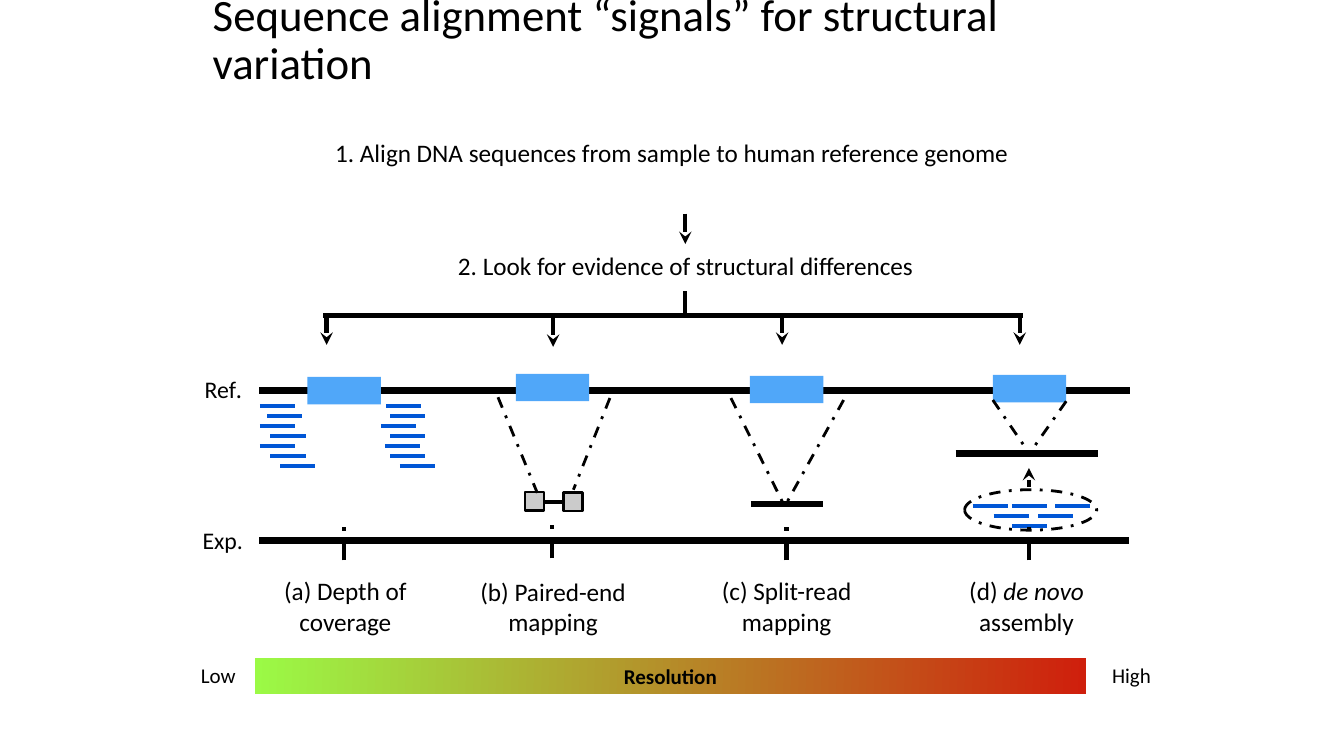
from dataclasses import dataclass

from lxml import etree
from pptx import Presentation
from pptx import util as u
from pptx.dml import color
from pptx.enum import dml, shapes, text
from pptx.oxml import ns

BLACK, READ_BLUE, BLOCK_BLUE, GREY = "000000", "0056D6", "50A7F9", "CBCBCB"
LOW_GREEN, HIGH_RED = "9BFA46", "CF1F0C"
READ_LENGTH, READ_STEP = 0.89, 0.25
INSET = 0.1
MIDDLE, BOTTOM = text.MSO_ANCHOR.MIDDLE, text.MSO_ANCHOR.BOTTOM
RECTANGLE, OVAL = shapes.MSO_SHAPE.RECTANGLE, shapes.MSO_SHAPE.OVAL


@dataclass
class Stroke:
    x1: float
    y1: float
    x2: float
    y2: float
    width: float = 3
    ink: str = BLACK
    dashed: bool = False
    arrow: bool = False


@dataclass
class Span:
    words: str
    italic: bool = False
    face: str = ""


@dataclass
class Label:
    left: float
    top: float
    width: float
    height: float
    size: float
    lines: list[list[Span]]
    anchor: text.MSO_ANCHOR = BOTTOM


@dataclass
class Method:
    centre: float
    block_top: float
    branch_x: float
    branch_end: float
    tick_bottom: float
    caption: Label


def rgb(code: str) -> color.RGBColor:
    return color.RGBColor.from_string(code)


def draw_stroke(page, stroke: Stroke) -> None:
    line = page.shapes.add_connector(
        shapes.MSO_CONNECTOR.STRAIGHT,
        u.Cm(stroke.x1), u.Cm(stroke.y1), u.Cm(stroke.x2), u.Cm(stroke.y2))
    line.line.width = u.Pt(stroke.width)
    line.line.color.rgb = rgb(stroke.ink)
    if stroke.dashed:
        line.line.dash_style = dml.MSO_LINE.DASH_DOT
    if stroke.arrow:
        tip = etree.SubElement(line.line._get_or_add_ln(), ns.qn("a:tailEnd"))
        tip.set("type", "stealth")
    etree.SubElement(line._element.spPr, ns.qn("a:effectLst"))


def draw_shape(page, kind, left: float, top: float, width: float, height: float,
               fill: str = "", outlined: bool = False):
    shape = page.shapes.add_shape(kind, u.Cm(left), u.Cm(top), u.Cm(width), u.Cm(height))
    shape.shadow.inherit = False
    if fill:
        shape.fill.solid()
        shape.fill.fore_color.rgb = rgb(fill)
    else:
        shape.fill.background()
    if outlined:
        shape.line.color.rgb = rgb(BLACK)
        shape.line.width = u.Pt(2)
    else:
        shape.line.fill.background()
    return shape


def set_frame(frame, anchor, inset: float) -> None:
    frame.word_wrap = True
    frame.auto_size = text.MSO_AUTO_SIZE.NONE
    frame.vertical_anchor = anchor
    frame.margin_left = frame.margin_right = u.Cm(inset)
    frame.margin_top = frame.margin_bottom = u.Cm(inset)


def set_font(para, size: float, align=text.PP_ALIGN.CENTER) -> None:
    para.alignment = align
    para.font.size = u.Pt(size)
    para.font.name = "Calibri"
    para.font.color.rgb = rgb(BLACK)


def draw_label(page, label: Label) -> None:
    box = page.shapes.add_textbox(
        u.Cm(label.left), u.Cm(label.top), u.Cm(label.width), u.Cm(label.height))
    frame = box.text_frame
    set_frame(frame, label.anchor, INSET)
    for index, spans in enumerate(label.lines):
        para = frame.add_paragraph() if index else frame.paragraphs[0]
        set_font(para, label.size)
        for span in spans:
            run = para.add_run()
            run.text = span.words
            if span.italic:
                run.font.italic = True
            if span.face:
                run.font.name = span.face


def draw_title(page, words: str) -> None:
    title = page.shapes.title
    title.left, title.top = u.Cm(5.11), u.Cm(0.61)
    title.width, title.height = u.Cm(23.67), u.Cm(1.9)
    title.text_frame.text = words
    set_frame(title.text_frame, BOTTOM, 0.25)
    para = title.text_frame.paragraphs[0]
    para.line_spacing = 0.9
    set_font(para, 32, text.PP_ALIGN.LEFT)


def draw_resolution_bar(page) -> None:
    bar = draw_shape(page, RECTANGLE, 6.43, 16.59, 20.93, 0.89)
    bar.fill.gradient()
    bar.fill.gradient_angle = 358
    for stop, code, place in zip(bar.fill.gradient_stops, (LOW_GREEN, HIGH_RED), (0, 1)):
        stop.color.rgb = rgb(code)
        stop.position = place
    set_frame(bar.text_frame, MIDDLE, INSET)
    para = bar.text_frame.paragraphs[0]
    para.text = "Resolution"
    set_font(para, 15)
    para.font.bold = True


def read(left: float, y: float) -> Stroke:
    return Stroke(left, y, left + READ_LENGTH, y, ink=READ_BLUE)


def caption(left: float, top: float, width: float, first: list[Span], second: str) -> Label:
    return Label(left, top, width, 1.88, 18, [first, [Span(second)]])


METHODS = [
    Method(8.67, 9.5, 8.23, 8.69, 14.12,
           caption(6.71, 14.25, 3.99, [Span("(a) Depth of")], "coverage")),
    Method(13.92, 9.42, 13.94, 8.74, 14.07,
           caption(11.63, 14.27, 4.62, [Span("(b) Paired-end")], "mapping")),
    Method(19.82, 9.47, 19.71, 8.69, 14.12,
           caption(17.73, 14.25, 4.19, [Span("(c) Split-read")], "mapping")),
    Method(25.94, 9.45, 25.7, 8.69, 14.12,
           caption(24.08, 14.25, 3.58, [Span("(d) "), Span("de novo", italic=True)], "assembly")),
]
LABELS = [
    Label(6.15, 3.33, 21.56, 1.04, 18,
          [[Span("1. Align DNA sequences from sample to human reference genome")]], MIDDLE),
    Label(10.36, 6.17, 13.84, 1.04, 18,
          [[Span("2. Look for evidence of structural differences")]], MIDDLE),
    Label(4.95, 9.25, 1.35, 1.02, 17, [[Span("Ref"), Span(".", face="Lato")]]),
    Label(4.88, 13.06, 1.47, 1.02, 17, [[Span("Exp.")]]),
    Label(4.85, 16.51, 1.3, 0.91, 15, [[Span("Low")]]),
    Label(27.79, 16.51, 1.45, 0.91, 15, [[Span("High")]]),
]
FLOW = [
    Stroke(17.27, 5.38, 17.27, 6.15, arrow=True),
    Stroke(17.27, 7.34, 17.27, 7.98),
    Stroke(8.15, 7.95, 25.78, 7.95),
]
GENOMES = [Stroke(6.53, 9.83, 28.47, 9.83, 5), Stroke(6.53, 13.61, 28.45, 13.61, 5)]
DEPTH_READS = [
    read(left, 10.24 + row * READ_STEP)
    for column in ((6.55, 6.73, 6.55, 6.81, 6.55, 6.81, 7.06),
                   (9.73, 9.83, 9.6, 9.83, 9.7, 9.83, 10.08))
    for row, left in enumerate(column)
]
ASSEMBLY_READS = [
    read(left, 12.75 + row * READ_STEP)
    for row, lefts in enumerate(((24.51, 25.5, 26.59), (25.04, 26.16), (25.5,)))
    for left in lefts
]
EVIDENCE = [
    Stroke(13.54, 12.65, 14.35, 12.65),
    Stroke(18.92, 12.7, 20.73, 12.7, 5),
    Stroke(24.08, 11.43, 27.66, 11.43, 5),
    Stroke(25.93, 12.27, 25.93, 11.79, arrow=True),
]
PROJECTIONS = [
    Stroke(*ends, width=2, dashed=True)
    for ends in ((12.55, 10.01, 13.54, 12.42), (15.37, 10.03, 14.45, 12.34),
                 (18.42, 10.03, 19.76, 12.73), (21.26, 10.08, 19.79, 12.73),
                 (25.02, 10.08, 25.91, 11.38), (26.87, 10.11, 25.96, 11.4))
]


def main() -> None:
    deck = Presentation()
    deck.slide_width, deck.slide_height = u.Cm(33.87), u.Cm(19.05)
    page = deck.slides.add_slide(deck.slide_layouts[5])
    draw_title(page, "Sequence alignment “signals” for structural variation")
    for stroke in FLOW + GENOMES + DEPTH_READS + ASSEMBLY_READS + EVIDENCE:
        draw_stroke(page, stroke)
    for method in METHODS:
        draw_stroke(page, Stroke(method.branch_x, 7.92, method.branch_x, method.branch_end, arrow=True))
        draw_shape(page, RECTANGLE, method.centre - 0.92, method.block_top, 1.85, 0.69, BLOCK_BLUE)
        draw_stroke(page, Stroke(method.centre, method.tick_bottom, method.centre,
                                 method.tick_bottom - 1.04, dashed=True))
    for left, top in ((14.2, 12.42), (13.23, 12.4)):
        draw_shape(page, RECTANGLE, left, top, 0.48, 0.46, GREY, outlined=True)
    ellipse = draw_shape(page, OVAL, 24.31, 12.34, 3.33, 1.02, outlined=True)
    ellipse.line.dash_style = dml.MSO_LINE.DASH_DOT
    for stroke in PROJECTIONS:
        draw_stroke(page, stroke)
    for label in LABELS + [method.caption for method in METHODS]:
        draw_label(page, label)
    draw_resolution_bar(page)
    deck.save("out.pptx")


if __name__ == "__main__":
    main()
